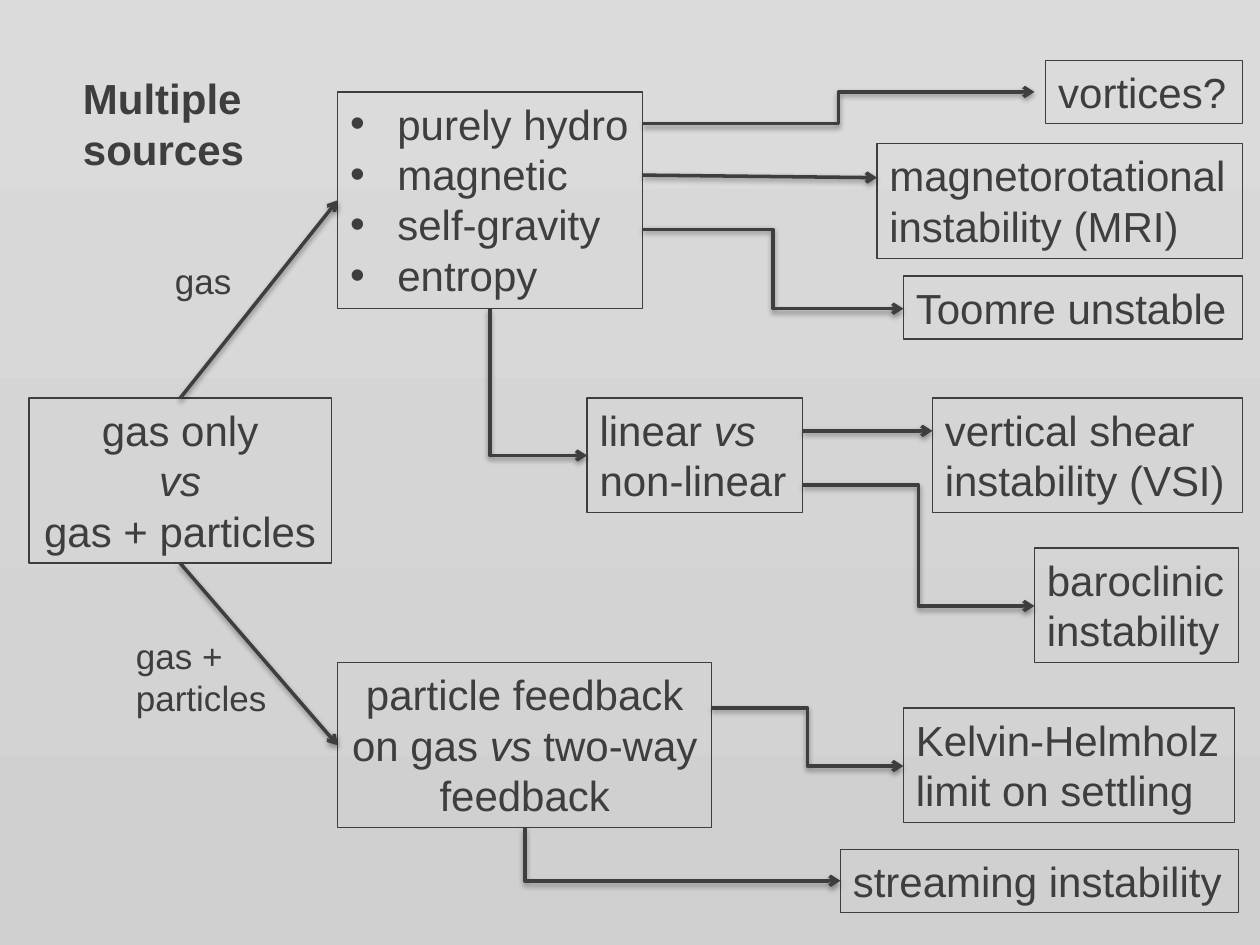
from lxml import etree
from pptx import Presentation
from pptx import util as u
from pptx.dml.color import RGBColor
from pptx.enum import shapes, text
from pptx.oxml import parse_xml
from pptx.oxml.ns import nsdecls, qn

COLORS = {"ink": "3E3E3E", "top": "DBDBDB", "bottom": "D0D0D0", "shadow": "000000"}
COLUMNS, ROWS = 100, 75
CELL = u.Inches(0.1)
LEFT, CENTER = text.PP_ALIGN.LEFT, text.PP_ALIGN.CENTER
TOP_SIDE, LEFT_SIDE, BOTTOM_SIDE = 0, 1, 2
STRAIGHT, ELBOW = shapes.MSO_CONNECTOR.STRAIGHT, shapes.MSO_CONNECTOR.ELBOW


def grid(*cells):
    """Turn counts of grid cells into slide lengths."""
    return [round(count * CELL) for count in cells]


def color(name):
    """Look up a palette colour."""
    return RGBColor.from_string(COLORS[name])


def paint_background(slide):
    """Fill the slide with a vertical gradient."""
    fill = slide.background.fill
    fill.gradient()
    fill.gradient_angle = 270
    for stop, name in zip(fill.gradient_stops, ("top", "bottom")):
        stop.color.rgb = color(name)


def add_bullet(paragraph):
    """Give a paragraph a hanging round bullet."""
    properties = paragraph._p.get_or_add_pPr()
    properties.set("marL", str(u.Inches(0.375)))
    properties.set("indent", str(u.Inches(-0.375)))
    etree.SubElement(properties, qn("a:buFont")).set("typeface", "Arial")
    etree.SubElement(properties, qn("a:buChar")).set("char", "•")


def write(holder, words, size=24, bold=False, align=LEFT, bullets=False):
    """Write one paragraph per line, with italics between asterisks."""
    frame = holder.text_frame
    frame.word_wrap = False
    frame.auto_size = text.MSO_AUTO_SIZE.SHAPE_TO_FIT_TEXT
    frame.vertical_anchor = text.MSO_ANCHOR.TOP
    for number, line in enumerate(words.split("\n")):
        paragraph = frame.add_paragraph() if number else frame.paragraphs[0]
        paragraph.alignment = align
        if bullets:
            add_bullet(paragraph)
        for part, piece in enumerate(line.split("*")):
            if piece:
                run = paragraph.add_run()
                run.text = piece
                run.font.name, run.font.size = "Arial", u.Pt(size)
                run.font.bold, run.font.italic = bold, part % 2 == 1
                run.font.color.rgb = color("ink")


def add_box(slide, place, words, **style):
    """Add an outlined box with text."""
    box = slide.shapes.add_shape(shapes.MSO_SHAPE.RECTANGLE, *grid(*place))
    box.shadow.inherit = False
    box.fill.background()
    box.line.color.rgb = color("ink")
    box.line.width = u.Pt(0.75)
    write(box, words, **style)
    return box


def add_label(slide, place, words, **style):
    """Add text without an outline."""
    write(slide.shapes.add_textbox(*grid(*place)), words, **style)


def style_arrow(arrow):
    """Give a connector its line, arrowhead and soft shadow."""
    arrow.line.color.rgb = color("ink")
    arrow.line.width = u.Pt(2)
    etree.SubElement(arrow.line._get_or_add_ln(), qn("a:tailEnd")).set("type", "arrow")
    arrow._element.spPr.append(parse_xml(
        f'<a:effectLst {nsdecls("a")}><a:outerShdw blurRad="40000" dist="20000" '
        f'dir="5400000" rotWithShape="0"><a:srgbClr val="{COLORS["shadow"]}">'
        '<a:alpha val="38000"/></a:srgbClr></a:outerShdw></a:effectLst>'))


def join(slide, source, side, target):
    """Draw a straight arrow from a side of one box to the left of another."""
    arrow = slide.shapes.add_connector(STRAIGHT, 0, 0, 0, 0)
    arrow.begin_connect(source, side)
    arrow.end_connect(target, LEFT_SIDE)
    style_arrow(arrow)


def branch(slide, source, row, end, kind=ELBOW):
    """Draw an arrow from the right edge of a box, at a row, to a point."""
    start = source.left + source.width, *grid(row)
    style_arrow(slide.shapes.add_connector(kind, *start, *grid(*end)))


def drop(slide, source, target):
    """Draw an arrow down from a box, then right into another."""
    start_x, start_y = source.left + source.width // 2, source.top + source.height
    end_x, end_y = target.left, target.top + target.height // 2
    middle_x, middle_y = (start_x + end_x) // 2, (start_y + end_y) // 2
    half_fall, half_run = (end_y - start_y) // 2, (end_x - start_x) // 2
    arrow = slide.shapes.add_connector(
        ELBOW, middle_x + half_fall, middle_y - half_run,
        middle_x - half_fall, middle_y + half_run)
    properties = arrow._element.spPr
    properties.find(qn("a:xfrm")).set("rot", str(270 * 60000))
    properties.find(qn("a:prstGeom")).set("prst", "bentConnector2")
    style_arrow(arrow)


def main():
    """Build the slide on sources of turbulence."""
    deck = Presentation()
    deck.slide_width, deck.slide_height = grid(COLUMNS, ROWS)
    slide = deck.slides.add_slide(deck.slide_layouts[6])
    paint_background(slide)

    contents = add_box(slide, (2.3, 31.6, 24, 13.1),
                       "gas only\n*vs*\ngas + particles", align=CENTER)
    drivers = add_box(slide, (26.8, 7.3, 24.2, 17.2),
                      "purely hydro\nmagnetic\nself-gravity\nentropy", bullets=True)
    feedback = add_box(slide, (26.8, 52.6, 29.7, 13.1),
                       "particle feedback\non gas *vs* two-way\nfeedback", align=CENTER)
    linearity = add_box(slide, (46.6, 31.6, 17.1, 9.1), "linear *vs*\nnon-linear")
    for place, words in (
        ((83, 4.8, 15.6, 5), "vortices?"),
        ((69.6, 11.4, 29, 9.1), "magnetorotational\ninstability (MRI)"),
        ((71.7, 21.9, 26.9, 5), "Toomre unstable"),
        ((74, 31.6, 24.6, 9.1), "vertical shear\ninstability (VSI)"),
        ((82.1, 43.5, 16.2, 9.1), "baroclinic\ninstability"),
        ((71.7, 56.2, 26.3, 9.1), "Kelvin-Helmholz\nlimit on settling"),
    ):
        add_box(slide, place, words)
    streaming = add_box(slide, (66.7, 67.4, 31.6, 5), "streaming instability")

    join(slide, contents, TOP_SIDE, drivers)
    join(slide, contents, BOTTOM_SIDE, feedback)
    add_label(slide, (12.9, 20.1, 6.5, 4.4), "gas", size=20)
    add_label(slide, (9.8, 49.9, 12.5, 7.7), "gas +\nparticles", size=20)
    branch(slide, drivers, 9.8, (82.1, 7.3))
    branch(slide, drivers, 13.9, (69.6, 14.1), kind=STRAIGHT)
    branch(slide, drivers, 18.2, (71.7, 24.5))
    drop(slide, drivers, linearity)
    branch(slide, linearity, 34.2, (74, 34.2), kind=STRAIGHT)
    branch(slide, linearity, 38.5, (82.1, 48.1))
    branch(slide, feedback, 56.2, (71.7, 60.8))
    drop(slide, feedback, streaming)
    add_label(slide, (5.6, 5.3, 14.9, 9.1), "Multiple\nsources", bold=True)
    deck.save("out.pptx")


if __name__ == "__main__":
    main()
